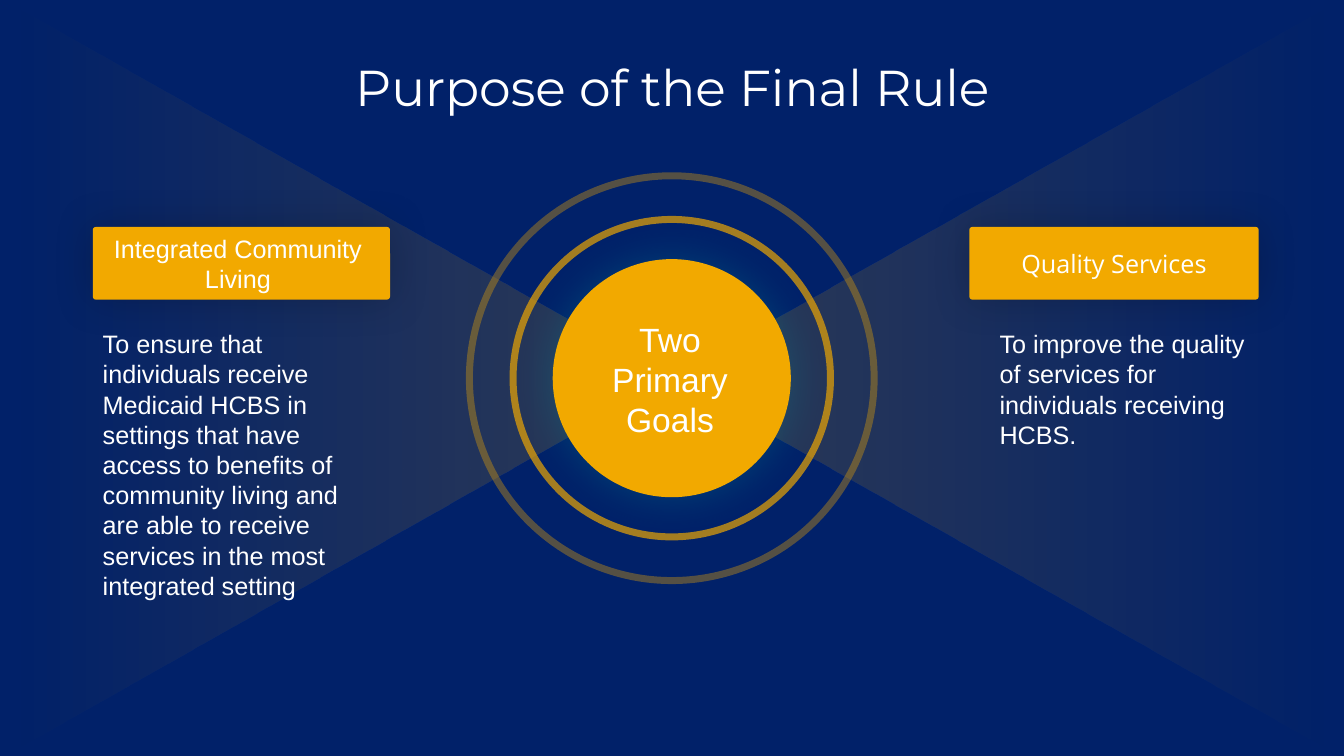
"""Build the slide on the two goals of the Final Rule."""
from dataclasses import dataclass

from lxml import etree
from pptx import Presentation
from pptx.dml.color import RGBColor
from pptx.enum.shapes import MSO_SHAPE
from pptx.enum.text import MSO_ANCHOR, PP_ALIGN
from pptx.oxml import parse_xml
from pptx.oxml.ns import qn
from pptx.util import Cm, Pt

OVAL = MSO_SHAPE.OVAL
ROUNDED = MSO_SHAPE.ROUNDED_RECTANGLE
TRIANGLE = MSO_SHAPE.FLOWCHART_EXTRACT
MIDDLE, TOP = MSO_ANCHOR.MIDDLE, MSO_ANCHOR.TOP
LEFT, CENTER = PP_ALIGN.LEFT, PP_ALIGN.CENTER
NS = "http://schemas.openxmlformats.org/drawingml/2006/main"


@dataclass(frozen=True)
class Theme:
    """Colours, fonts and type sizes of the slide."""
    navy: str = "012169"
    gold: str = "F2A900"
    teal: str = "008C95"
    black: str = "000000"
    white: str = "FFFFFF"
    title_font: str = "Montserrat"
    label_font: str = "Open Sans"
    body_font: str = "Arial"
    title: int = 36
    centre: int = 24
    body: int = 18


T = Theme()
CX, CY = 16.93, 9.53


def write(sp, lines, size, font=T.body_font, align=LEFT, anchor=TOP, spacing=None):
    """Fill a shape with one white paragraph per line."""
    tf = sp.text_frame
    tf.word_wrap = True
    tf.vertical_anchor = anchor
    for i, line in enumerate(lines):
        p = tf.paragraphs[0] if i == 0 else tf.add_paragraph()
        p.alignment = align
        p.line_spacing = spacing
        r = p.add_run()
        r.text = line
        r.font.size = Pt(size)
        r.font.name = font
        r.font.color.rgb = RGBColor.from_string(T.white)


def add_text(s, box, text, size, **style):
    """Add a text box with a single paragraph."""
    write(s.shapes.add_textbox(*map(Cm, box)), [text], size, **style)


def add_solid(s, kind, box, shadow, alpha):
    """Add a gold shape with a soft shadow all round it."""
    sp = s.shapes.add_shape(kind, *map(Cm, box))
    sp.fill.solid()
    sp.fill.fore_color.rgb = RGBColor.from_string(T.gold)
    sp.line.fill.background()
    sp.shadow.inherit = False
    effects = sp._element.spPr.find(qn("a:effectLst"))
    effects.append(parse_xml(
        f'<a:outerShdw xmlns:a="{NS}" blurRad="{Pt(30)}" dist="0" dir="0" '
        f'algn="ctr" rotWithShape="0"><a:srgbClr val="{shadow}">'
        f'<a:alpha val="{alpha * 1000}"/></a:srgbClr></a:outerShdw>'))
    return sp


def circle_box(d):
    """Return the box of a circle of diameter d about the slide centre."""
    return CX - d / 2, CY - d / 2, d, d


def add_ring(s, d, alpha):
    """Add a translucent gold ring."""
    sp = s.shapes.add_shape(OVAL, *map(Cm, circle_box(d)))
    sp.fill.background()
    sp.shadow.inherit = False
    sp.line.width = Pt(5)
    sp.line.color.rgb = RGBColor.from_string(T.gold)
    clr = sp.line._ln.find(".//" + qn("a:srgbClr"))
    etree.SubElement(clr, qn("a:alpha")).set("val", str(alpha * 1000))


def add_beam(s, side, rotation):
    """Add a triangle that fades from the centre to one side."""
    w, h = 19.13, 16.89
    box = (CX + side * h / 2 - w / 2, CY - h / 2, w, h)
    sp = s.shapes.add_shape(TRIANGLE, *map(Cm, box))
    sp.rotation = rotation
    sp.line.fill.background()
    sp.shadow.inherit = False
    stops = "".join(
        f'<a:gs pos="{pos * 1000}"><a:srgbClr val="{T.gold}">'
        f'<a:alpha val="{alpha * 1000}"/></a:srgbClr></a:gs>'
        for pos, alpha in ((0, 0), (100, 20)))
    sp._element.spPr.find(qn("a:prstGeom")).addnext(parse_xml(
        f'<a:gradFill xmlns:a="{NS}" rotWithShape="1"><a:gsLst>{stops}</a:gsLst>'
        f'<a:lin ang="{270 * 60000}" scaled="0"/></a:gradFill>'))


def add_label(s, left, width, lines, font):
    """Add a gold goal label."""
    sp = add_solid(s, ROUNDED, (left, 5.72, width, 1.83), T.black, 20)
    sp.adjustments[0] = 0.04
    write(sp, lines, T.body, font=font, align=CENTER, anchor=MIDDLE)


def main():
    """Build and save the slide."""
    prs = Presentation()
    prs.slide_width, prs.slide_height = Cm(33.87), Cm(19.05)
    s = prs.slides.add_slide(prs.slide_layouts[6])
    s.background.fill.solid()
    s.background.fill.fore_color.rgb = RGBColor.from_string(T.navy)

    add_beam(s, -1, 90)
    add_beam(s, 1, 270)
    add_text(s, (2.34, 1.04, 29.21, 2.46), "Purpose of the Final Rule", T.title,
             font=T.title_font, align=CENTER, anchor=MIDDLE, spacing=0.9)
    add_ring(s, 8, 67)
    add_solid(s, OVAL, circle_box(6), T.teal, 30)
    add_ring(s, 10.2, 34)
    add_label(s, 2.34, 7.49, ["Integrated Community ", "Living "], T.body_font)
    add_label(s, 24.43, 7.29, ["Quality Services"], T.label_font)
    add_text(s, (2.34, 8.15, 7.42, 7.19),
             "To ensure that individuals receive Medicaid HCBS in settings that have "
             "access to benefits of community living and are able to receive services "
             "in the most integrated setting", T.body)
    add_text(s, (24.94, 8.15, 6.81, 3.33),
             "To improve the quality of services for individuals receiving HCBS.", T.body)
    add_text(s, (14.83, 7.9, 4.11, 3.33), "Two Primary Goals", T.centre, align=CENTER)
    prs.save("out.pptx")


if __name__ == "__main__":
    main()
